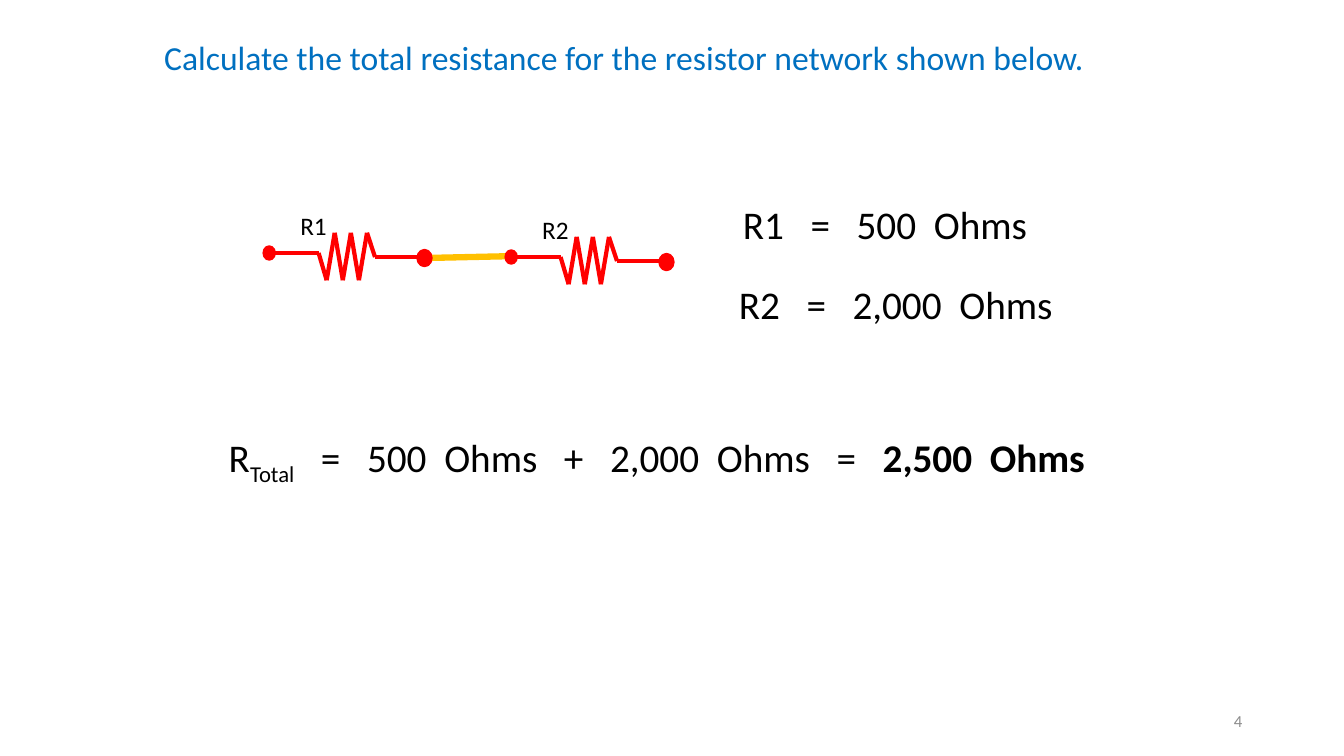
import itertools

import pptx
import pptx.dml.color
import pptx.enum.shapes
import pptx.enum.text
import pptx.oxml.ns
import pptx.util

PX = 9144  # EMU in one px, 100 px to the inch
COLORS = {"text": "000000", "title": "0070C0", "number": "8C8C8C",
          "resistor": "FF0000", "wire": "FFC000"}
SPACE_WIDTH = 0.226  # width of a Calibri space, in ems


def color(name):
    return pptx.dml.color.RGBColor.from_string(COLORS[name])


class Page:
    def __init__(self, deck):
        self.shapes = deck.slides.add_slide(deck.slide_layouts[6]).shapes

    def line(self, start, end, name="resistor", width=3):
        connector = self.shapes.add_connector(
            pptx.enum.shapes.MSO_CONNECTOR.STRAIGHT,
            *(value * PX for value in (*start, *end)))
        connector.line.color.rgb = color(name)
        connector.line.width = pptx.util.Pt(width)
        properties = connector._element.spPr
        properties.append(properties.makeelement(pptx.oxml.ns.qn("a:effectLst"), {}))

    def dot(self, left, top, outline):
        dot = self.shapes.add_shape(pptx.enum.shapes.MSO_SHAPE.OVAL,
                                    left * PX, top * PX, 12 * PX, 14 * PX)
        dot.shadow.inherit = False
        dot.fill.solid()
        dot.fill.fore_color.rgb = dot.line.color.rgb = color("resistor")
        dot.line.width = pptx.util.Pt(outline)

    def box(self, left, top, width, height, **formats):
        """Add an empty text box and return its paragraph."""
        frame = self.shapes.add_textbox(*(v * PX for v in (left, top, width, height))).text_frame
        settings = {"word_wrap": True,
                    "auto_size": pptx.enum.text.MSO_AUTO_SIZE.SHAPE_TO_FIT_TEXT, **formats}
        for name, value in settings.items():
            setattr(frame, name, value)
        return frame.paragraphs[0]

    def span(self, para, text, size, name="text", bold=None, **attributes):
        """Add a run; attributes go to its properties, such as baseline or spc."""
        span = para.add_run()
        span.text = text
        for key, value in {"name": "Calibri", "size": pptx.util.Pt(size), "bold": bold}.items():
            setattr(span.font, key, value)
        span.font.color.rgb = color(name)
        for key, value in attributes.items():
            span._r.get_or_add_rPr().set(key, str(value))

    def equation(self, para, words, bold_from=None, size=28):
        """Set words apart by wide gaps, narrower ahead of a unit."""
        for index, word in enumerate(words):
            bold = True if bold_from is not None and index >= bold_from else None
            if index:
                extra = 1 if word == "Ohms" else 2
                self.span(para, " ", size, spc=round(extra * SPACE_WIDTH * size * 100))
            symbol, _, subscript = word.partition("_")
            self.span(para, symbol, size, bold=bold)
            if subscript:
                self.span(para, subscript, size, baseline=-25000)

    def resistor(self, label, left, top):
        """Draw a zigzag between two dots; left and top are those of the first dot."""
        heights = [7, 34, -13, 34, -13, 34, -13, 11]
        zigzag = [(left + 55 + 8 * index, top + height) for index, height in enumerate(heights)]
        points = [(left + 12, top + 7), *zigzag, (left + 154, top + 11)]
        for start, end in itertools.pairwise(points):
            self.line(start, end)
        self.dot(left + 154, top + 5, outline=3)
        self.dot(left, top, outline=1)
        self.span(self.box(left + 27, top - 40, 47, 40), label, 18)


def main():
    deck = pptx.Presentation()
    deck.slide_width, deck.slide_height = 1333 * PX, 750 * PX
    page = Page(deck)

    page.line((421, 256), (513, 254), "wire", 4.5)
    page.resistor("R1", 261, 244)
    page.resistor("R2", 501, 248)

    page.equation(page.box(727, 194, 367, 57), "R1 = 500 Ohms".split())
    page.equation(page.box(723, 273, 367, 57), "R2 = 2,000 Ohms".split())
    page.equation(page.box(217, 425, 959, 57),
                  "R_Total = 500 Ohms + 2,000 Ohms = 2,500 Ohms".split(), bold_from=8)

    number = page.box(942, 695, 300, 40, auto_size=pptx.enum.text.MSO_AUTO_SIZE.NONE,
                      vertical_anchor=pptx.enum.text.MSO_ANCHOR.MIDDLE)
    number.alignment = pptx.enum.text.PP_ALIGN.RIGHT
    page.span(number, "4", 12, "number")
    page.span(page.box(153, 32, 971, 50),
              "Calculate the total resistance for the resistor network shown below.", 24, "title")
    deck.save("out.pptx")


if __name__ == "__main__":
    main()
